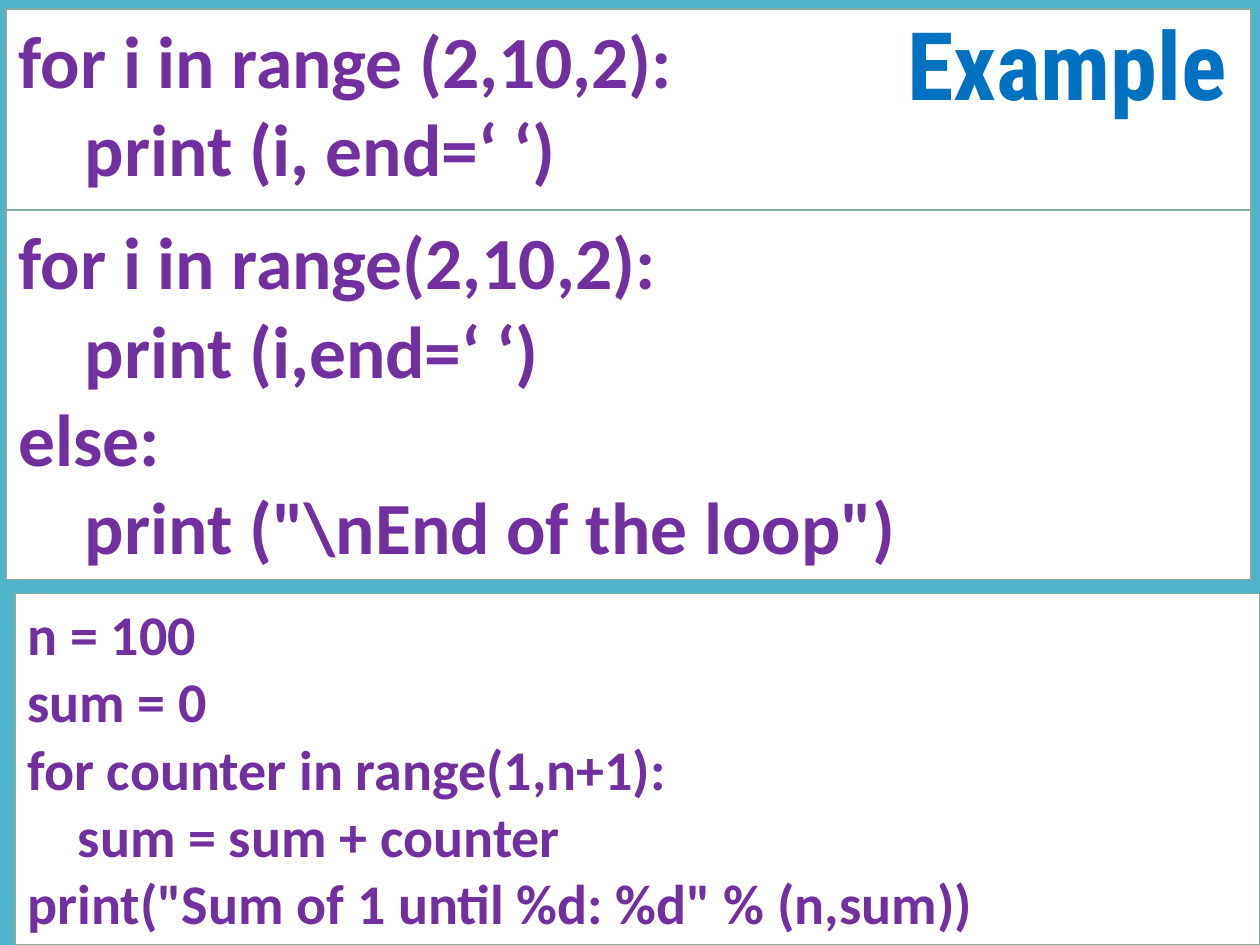
from dataclasses import dataclass

from pptx import Presentation
from pptx.dml.color import RGBColor
from pptx.enum.shapes import MSO_SHAPE
from pptx.enum.text import MSO_ANCHOR, MSO_AUTO_SIZE, PP_ALIGN
from pptx.util import Pt

RECT = MSO_SHAPE.RECTANGLE
TOP = MSO_ANCHOR.TOP
FIXED = MSO_AUTO_SIZE.NONE
JUSTIFY = PP_ALIGN.JUSTIFY

TEAL, WHITE, EDGE = "50B4C8", "FFFFFF", "84AC9D"
PURPLE, BLUE = "7030A0", "0070C0"
INDENT = 0.9  # one code level, as a share of the font size


@dataclass
class Panel:
    left: float
    top: float
    width: float
    height: float
    size: int
    lines: list[tuple[int, str]]  # code level, text


PANELS = [
    Panel(3.6, 5, 711.4, 160, 42, [
        (0, "for i in range (2,10,2):"),
        (1, "print (i, end=‘ ‘)"),
    ]),
    Panel(3.6, 120.2, 711.4, 211, 42, [
        (0, "for i in range(2,10,2):"),
        (1, "print (i,end=‘ ‘)"),
        (0, "else:"),
        (1, 'print ("\\nEnd of the loop")'),
    ]),
    Panel(8.6, 339.1, 711.4, 200.9, 32, [
        (0, "n = 100"),
        (0, "sum = 0"),
        (0, "for counter in range(1,n+1):"),
        (1, "sum = sum + counter"),
        (0, 'print("Sum of 1 until %d: %d" % (n,sum))'),
    ]),
]


def color(code: str) -> RGBColor:
    return RGBColor.from_string(code)


def apply(target, values: dict) -> None:
    for name, value in values.items():
        setattr(target, name, value)


def write(para, text: str, face: str, size: int, ink: str) -> None:
    para.alignment = JUSTIFY
    run = para.add_run()
    run.text = text
    apply(run.font, {"name": face, "size": Pt(size), "bold": True})
    run.font.color.rgb = color(ink)


def draw_panel(slide, panel: Panel) -> None:
    box = slide.shapes.add_shape(
        RECT, Pt(panel.left), Pt(panel.top), Pt(panel.width), Pt(panel.height))
    box.shadow.inherit = False
    box.fill.solid()
    box.fill.fore_color.rgb = color(WHITE)
    box.line.color.rgb = color(EDGE)
    box.line.width = Pt(1)
    frame = box.text_frame
    apply(frame, {"word_wrap": True, "auto_size": FIXED, "vertical_anchor": TOP})
    for row, (level, text) in enumerate(panel.lines):
        para = frame.add_paragraph() if row else frame.paragraphs[0]
        write(para, text, "Calibri", panel.size, PURPLE)
        margin = Pt(level * INDENT * panel.size)
        para._p.get_or_add_pPr().set("marL", str(margin))


def draw_title(slide, text: str) -> None:
    title = slide.shapes.title
    apply(title, {"left": Pt(511.2), "top": Pt(0),
                  "width": Pt(206.6), "height": Pt(72.7)})
    frame = title.text_frame
    apply(frame, {"word_wrap": False, "auto_size": FIXED, "vertical_anchor": TOP})
    write(frame.paragraphs[0], text, "Roboto Condensed", 54, BLUE)
    # Bring the title in front of the panels
    slide.shapes._spTree.append(title._element)


def main() -> None:
    deck = Presentation()
    apply(deck, {"slide_width": Pt(720), "slide_height": Pt(540)})
    slide = deck.slides.add_slide(deck.slide_layouts[5])

    # Background
    back = slide.background.fill
    back.solid()
    back.fore_color.rgb = color(TEAL)

    # Code panels, then the title on top
    for panel in PANELS:
        draw_panel(slide, panel)
    draw_title(slide, "Example")
    deck.save("out.pptx")


if __name__ == "__main__":
    main()
